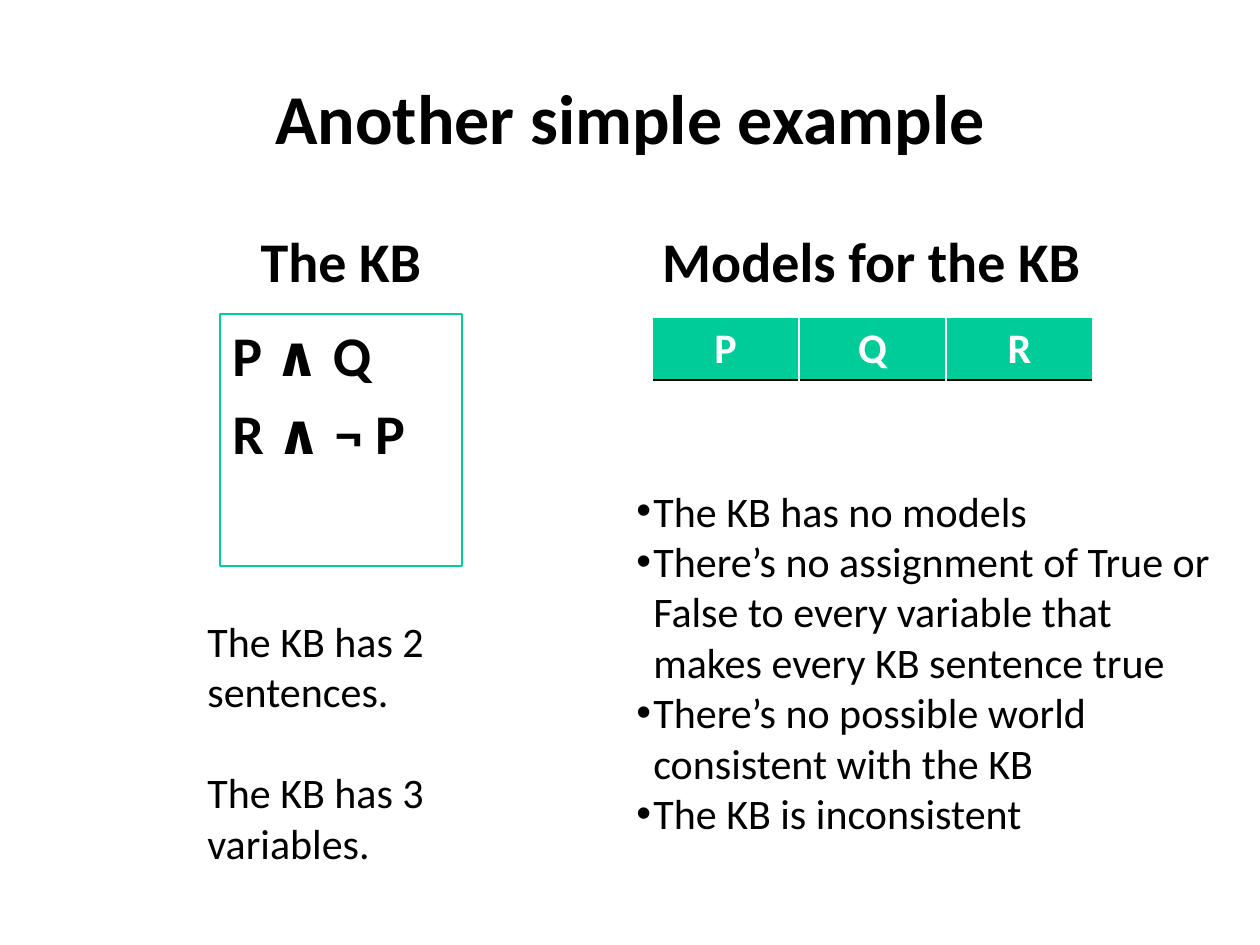
"""Build a slide about a knowledge base that has no models."""
from lxml.etree import SubElement
from pptx import Presentation
from pptx.dml.color import RGBColor
from pptx.enum.shapes import MSO_SHAPE
from pptx.enum.text import MSO_ANCHOR as ANCHOR, PP_ALIGN as ALIGN
from pptx.oxml.ns import qn
from pptx.util import Pt

PX = 914400 // 126
FONT = "Calibri"
COLORS = {"text": "000000", "accent": "00CC99", "white": "FFFFFF"}

TITLE = ("Another simple example", (63, 38, 1134, 157))
HEADINGS = [
    ("The KB", (220, 212, 242, 88)),
    ("Models for the KB", (630, 212, 483, 88)),
]
SENTENCES = (["P ∧ Q", "R ∧ ¬ P"], (220, 314, 242, 252))
VARIABLES = (["P", "Q", "R"], (652, 317, 441, 63))
COUNTS = (["The KB has 2 sentences.", "The KB has 3 variables."], (195, 609, 291, 267))
FINDINGS = ([
    "The KB has no models",
    "There’s no assignment of True or False to every variable that makes every KB sentence true",
    "There’s no possible world consistent with the KB",
    "The KB is inconsistent",
], (624, 479, 605, 369))
BORDERS = {"lnL": "white", "lnR": "white", "lnT": "white", "lnB": "text"}
BULLET_INDENT = 17


def emu(box):
    return [length * PX for length in box]


def rgb(name):
    return RGBColor.from_string(COLORS[name])


def write(frame, lines, size, bold=False, color="text", align=ALIGN.LEFT,
          anchor=ANCHOR.TOP, before=0, after=0):
    frame.word_wrap = True
    frame.vertical_anchor = anchor
    for index, line in enumerate(lines):
        paragraph = frame.paragraphs[0] if index == 0 else frame.add_paragraph()
        paragraph.alignment = align
        paragraph.space_before = Pt(before)
        paragraph.space_after = Pt(after)
        run = paragraph.add_run()
        run.text = line
        font = run.font
        font.name, font.size, font.bold = FONT, Pt(size), bold
        font.color.rgb = rgb(color)


def add_text(slide, lines, box, size, **style):
    frame = slide.shapes.add_textbox(*emu(box)).text_frame
    write(frame, lines, size, **style)
    return frame


def add_bullets(frame):
    for paragraph in frame.paragraphs:
        properties = paragraph._p.get_or_add_pPr()
        properties.set("marL", str(BULLET_INDENT * PX))
        properties.set("indent", str(-BULLET_INDENT * PX))
        SubElement(properties, qn("a:buFont"), typeface="Arial")
        SubElement(properties, qn("a:buChar"), char="•")


def style_cell(cell):
    properties = cell._tc.get_or_add_tcPr()
    for side, color in BORDERS.items():
        border = SubElement(properties, qn(f"a:{side}"), w=str(Pt(1)))
        fill = SubElement(border, qn("a:solidFill"))
        SubElement(fill, qn("a:srgbClr"), val=COLORS[color])
    cell.fill.solid()
    cell.fill.fore_color.rgb = rgb("accent")


def add_variables(slide, names, box):
    table = slide.shapes.add_table(1, len(names), *emu(box)).table
    for cell, name in zip(table.rows[0].cells, names):
        write(cell.text_frame, [name], 24, bold=True, color="white", align=ALIGN.CENTER)
        style_cell(cell)


def add_sentences(slide, lines, box):
    panel = slide.shapes.add_shape(MSO_SHAPE.RECTANGLE, *emu(box))
    panel.shadow.inherit = False
    panel.fill.background()
    panel.line.color.rgb = rgb("accent")
    panel.line.width = Pt(0.75)
    write(panel.text_frame, lines, 32, bold=True, before=6.4)


def main():
    deck = Presentation()
    deck.slide_width, deck.slide_height = emu((1260, 945))
    slide = deck.slides.add_slide(deck.slide_layouts[5])

    heading, box = TITLE
    title = slide.shapes.title
    title.left, title.top, title.width, title.height = emu(box)
    write(title.text_frame, [heading], 40, bold=True, align=ALIGN.CENTER, anchor=ANCHOR.MIDDLE)

    for heading, box in HEADINGS:
        add_text(slide, [heading], box, 32, bold=True, align=ALIGN.CENTER,
                 anchor=ANCHOR.BOTTOM, before=6.4)
    add_sentences(slide, *SENTENCES)
    add_variables(slide, *VARIABLES)
    add_text(slide, *COUNTS, 24, after=29)
    add_bullets(add_text(slide, *FINDINGS, 24))
    deck.save("out.pptx")


if __name__ == "__main__":
    main()
